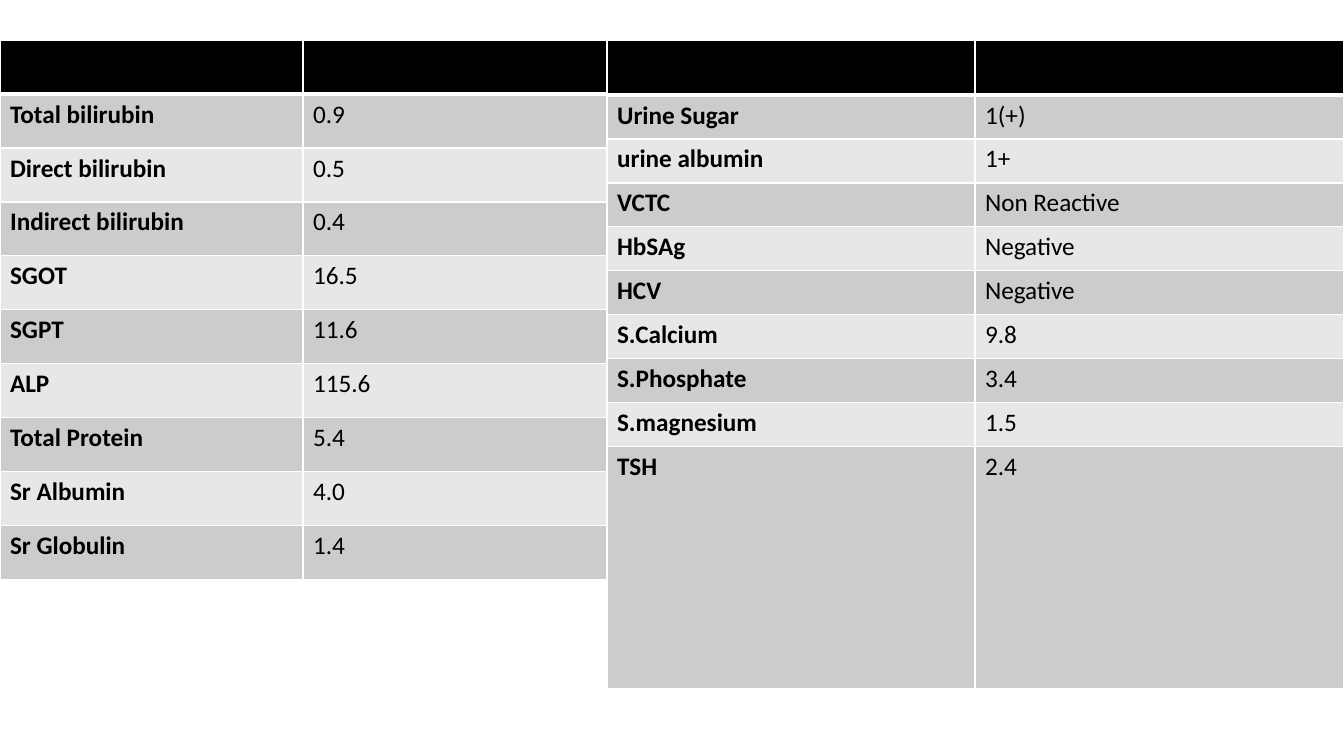
"""Build a slide with two side-by-side tables of laboratory results."""
from lxml import etree
from pptx import Presentation
from pptx.dml.color import RGBColor
from pptx.oxml.ns import qn
from pptx.util import Pt

PX = 9071
BLANK_LAYOUT = 6
TABLE_TOP = 40
HEADER_FILL = "000000"
BAND_FILLS = ["E7E7E7", "CCCCCC"]
BORDER_COLOR = "FFFFFF"

LIVER_RESULTS = [
    ("Total bilirubin", "0.9"),
    ("Direct bilirubin", "0.5"),
    ("Indirect bilirubin", "0.4"),
    ("SGOT", "16.5"),
    ("SGPT", "11.6"),
    ("ALP", "115.6"),
    ("Total Protein", "5.4"),
    ("Sr Albumin", "4.0"),
    ("Sr Globulin", "1.4"),
]
OTHER_RESULTS = [
    ("Urine Sugar", "1(+)"),
    ("urine albumin", "1+"),
    ("VCTC", "Non Reactive"),
    ("HbSAg", "Negative"),
    ("HCV", "Negative"),
    ("S.Calcium", "9.8"),
    ("S.Phosphate", "3.4"),
    ("S.magnesium", "1.5"),
    ("TSH", "2.4"),
]
TABLES = [
    (0, [303, 304], [54] * 10, LIVER_RESULTS),
    (607, [368, 369], [55] + [44] * 8 + [242], OTHER_RESULTS),
]


def color(hex_string):
    """Return the colour for a hex string."""
    return RGBColor.from_string(hex_string)


def add_border(cell, side, points):
    """Draw one side of a cell's border."""
    properties = cell._tc.get_or_add_tcPr()
    line = etree.SubElement(properties, qn(f"a:ln{side}"), w=str(Pt(points)))
    fill = etree.SubElement(line, qn("a:solidFill"))
    etree.SubElement(fill, qn("a:srgbClr"), val=BORDER_COLOR)


presentation = Presentation()
presentation.slide_width = 1344 * PX
presentation.slide_height = 756 * PX
slide = presentation.slides.add_slide(presentation.slide_layouts[BLANK_LAYOUT])

for left, widths, heights, results in TABLES:
    rows = [("", "")] + results
    table = slide.shapes.add_table(
        len(rows), len(widths), left * PX, TABLE_TOP * PX,
        sum(widths) * PX, sum(heights) * PX,
    ).table
    for column, width in zip(table.columns, widths):
        column.width = width * PX
    for row, height in zip(table.rows, heights):
        row.height = height * PX

    for row_index, row in enumerate(rows):
        for column_index, text in enumerate(row):
            cell = table.cell(row_index, column_index)
            cell.text = text
            font = cell.text_frame.paragraphs[0].font
            font.name = "Calibri"
            font.size = Pt(18)
            font.bold = column_index == 0
            font.color.rgb = color("000000")

            top_width = 3 if row_index == 1 else 1
            bottom_width = 3 if row_index == 0 else 1
            for side, points in zip("LRTB", [1, 1, top_width, bottom_width]):
                add_border(cell, side, points)
            cell.fill.solid()
            band_fill = BAND_FILLS[row_index % 2]
            cell.fill.fore_color.rgb = color(band_fill if row_index else HEADER_FILL)

presentation.save("out.pptx")
